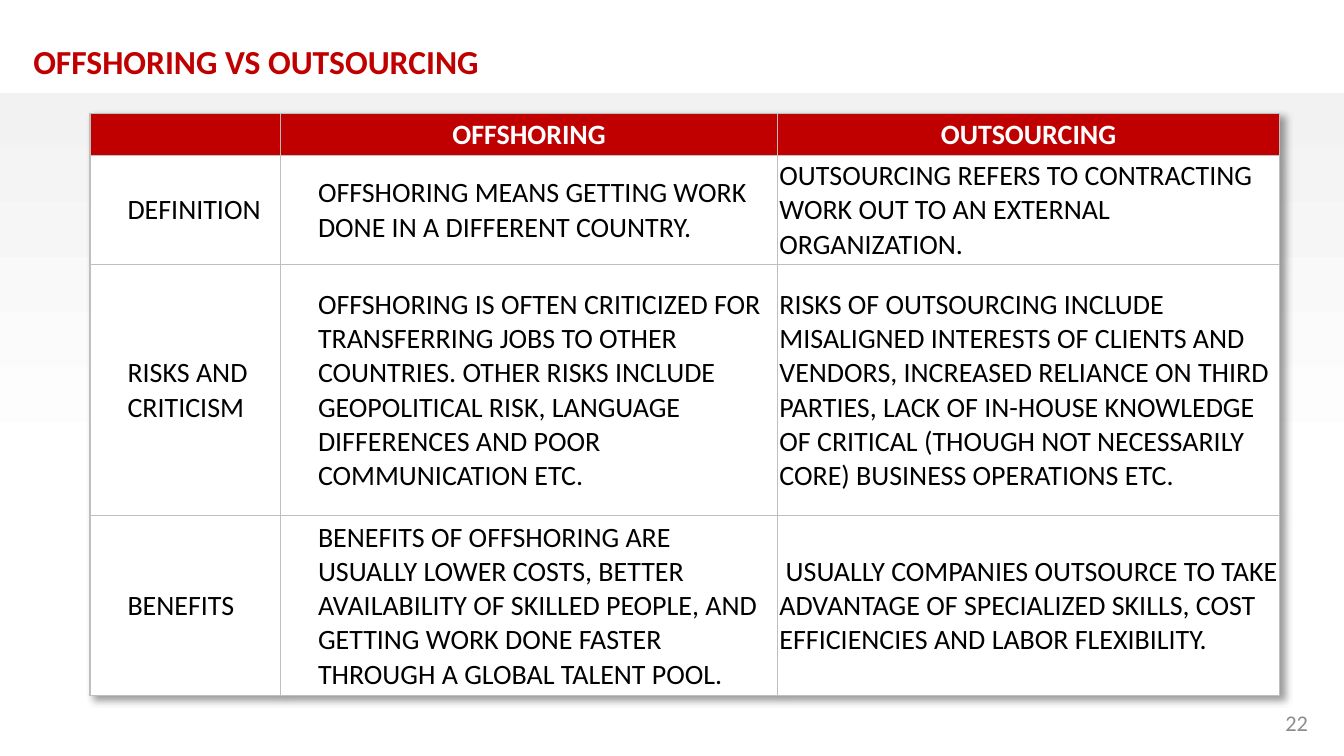
from dataclasses import dataclass

from lxml import etree
from pptx import Presentation
from pptx.dml.color import RGBColor
from pptx.enum.shapes import MSO_SHAPE as Shape
from pptx.enum.text import MSO_ANCHOR as Anchor, PP_ALIGN as Align
from pptx.oxml import parse_xml
from pptx.oxml.ns import nsdecls, qn
from pptx.util import Cm, Pt

RED = RGBColor(0xC0, 0x00, 0x00)
WHITE = RGBColor(0xFF, 0xFF, 0xFF)
BLACK = RGBColor(0x00, 0x00, 0x00)
PALE_GRAY = RGBColor(0xF2, 0xF2, 0xF2)
MID_GRAY = RGBColor(0x8C, 0x8C, 0x8C)
BORDER_GRAY = RGBColor(0xBF, 0xBF, 0xBF)
FONT = "Calibri"

COLUMN_WIDTHS = (3.6, 9.4, 9.48)
ROW_HEIGHTS = (0.79, 2.06, 4.75, 3.4)
INDENT, EDGE = 0.71, 0.03
LEFT_MARGINS = (INDENT, INDENT, EDGE)

ROWS = (
    ("", "OFFSHORING", "OUTSOURCING"),
    ("DEFINITION",
     "OFFSHORING MEANS GETTING WORK DONE IN A DIFFERENT COUNTRY.",
     "OUTSOURCING REFERS TO CONTRACTING WORK OUT TO AN EXTERNAL ORGANIZATION."),
    ("RISKS AND CRITICISM",
     "OFFSHORING IS OFTEN CRITICIZED FOR TRANSFERRING JOBS TO OTHER COUNTRIES. "
     "OTHER RISKS INCLUDE GEOPOLITICAL RISK, LANGUAGE DIFFERENCES AND POOR "
     "COMMUNICATION ETC.",
     "RISKS OF OUTSOURCING INCLUDE MISALIGNED INTERESTS OF CLIENTS AND VENDORS, "
     "INCREASED RELIANCE ON THIRD PARTIES, LACK OF IN-HOUSE KNOWLEDGE OF CRITICAL "
     "(THOUGH NOT NECESSARILY CORE) BUSINESS OPERATIONS ETC."),
    ("BENEFITS",
     "BENEFITS OF OFFSHORING ARE USUALLY LOWER COSTS, BETTER AVAILABILITY OF "
     "SKILLED PEOPLE, AND GETTING WORK DONE FASTER THROUGH A GLOBAL TALENT POOL.",
     " USUALLY COMPANIES OUTSOURCE TO TAKE ADVANTAGE OF SPECIALIZED SKILLS, COST "
     "EFFICIENCIES AND LABOR FLEXIBILITY."),
)


@dataclass(frozen=True)
class TextStyle:
    size: float
    color: RGBColor
    bold: bool = False
    align: Align = Align.LEFT


@dataclass(frozen=True)
class Label:
    text: str
    left: float
    top: float
    width: float
    height: float
    style: TextStyle
    wrap: bool


HEADER = TextStyle(15, WHITE, True, Align.CENTER)
BODY = TextStyle(15, BLACK)
LABELS = (
    Label("OFFSHORING VS OUTSOURCING", 0.38, 0.64, 10.34, 1.02,
          TextStyle(18, RED, True), False),
    Label("22", 19.05, 13.28, 5.92, 0.76,
          TextStyle(12, MID_GRAY, align=Align.RIGHT), True),
)


def set_all(target, values: dict) -> None:
    for name, value in values.items():
        setattr(target, name, value)


def write(frame, text: str, style: TextStyle) -> None:
    para = frame.paragraphs[0]
    para.alignment = style.align
    span = para.add_run()
    span.text = text
    set_all(span.font, {"name": FONT, "size": Pt(style.size), "bold": style.bold})
    span.font.color.rgb = style.color


def draw_backdrop(page) -> None:
    panel = page.shapes.add_shape(Shape.RECTANGLE, Cm(-0.02), Cm(1.75), Cm(25.43), Cm(12.54))
    panel.shadow.inherit = False
    panel.line.fill.background()
    panel.fill.gradient()
    panel.fill.gradient_angle = 270
    for stop, color, position in zip(panel.fill.gradient_stops, (PALE_GRAY, WHITE), (0, 0.58)):
        stop.color.rgb = color
        stop.position = position


def draw_label(page, label: Label) -> None:
    box = page.shapes.add_textbox(Cm(label.left), Cm(label.top), Cm(label.width), Cm(label.height))
    set_all(box.text_frame, {"word_wrap": label.wrap, "vertical_anchor": Anchor.MIDDLE})
    write(box.text_frame, label.text, label.style)


def add_borders(cell) -> None:
    properties = cell._tc.get_or_add_tcPr()
    for place, side in enumerate(("lnL", "lnR", "lnT", "lnB")):
        properties.insert(place, parse_xml(
            f'<a:{side} {nsdecls("a")} w="{Pt(0.75)}"><a:solidFill>'
            f'<a:srgbClr val="{BORDER_GRAY}"/></a:solidFill></a:{side}>'))


def add_table_shadow(table) -> None:
    effects = etree.Element(qn("a:effectLst"))
    shadow = etree.SubElement(effects, qn("a:outerShdw"), blurRad="50800", dist="38100",
                              dir="2700000", algn="tl", rotWithShape="0")
    color = etree.SubElement(shadow, qn("a:srgbClr"), val=str(BLACK))
    etree.SubElement(color, qn("a:alpha"), val="40000")
    table._tbl.tblPr.insert(0, effects)


def draw_table(page) -> None:
    table = page.shapes.add_table(len(ROWS), len(COLUMN_WIDTHS), Cm(1.7), Cm(2.14),
                                  Cm(sum(COLUMN_WIDTHS)), Cm(sum(ROW_HEIGHTS))).table
    for column, width in zip(table.columns, COLUMN_WIDTHS):
        column.width = Cm(width)
    for row, height in zip(table.rows, ROW_HEIGHTS):
        row.height = Cm(height)
    for r, texts in enumerate(ROWS):
        is_header = r == 0
        for c, text in enumerate(texts):
            cell = table.cell(r, c)
            set_all(cell, {
                "margin_left": Cm(EDGE if is_header else LEFT_MARGINS[c]),
                "margin_right": Cm(EDGE),
                "margin_top": Cm(EDGE),
                "margin_bottom": Cm(0),
                "vertical_anchor": Anchor.MIDDLE,
            })
            cell.fill.solid()
            cell.fill.fore_color.rgb = RED if is_header else WHITE
            add_borders(cell)
            write(cell.text_frame, text, HEADER if is_header else BODY)
    add_table_shadow(table)


def main() -> None:
    deck = Presentation()
    set_all(deck, {"slide_width": Cm(25.4), "slide_height": Cm(14.29)})
    page = deck.slides.add_slide(deck.slide_layouts[6])

    # Background panel
    draw_backdrop(page)
    # Title and page number
    for label in LABELS:
        draw_label(page, label)
    # Comparison table
    draw_table(page)

    deck.save("out.pptx")


if __name__ == "__main__":
    main()
